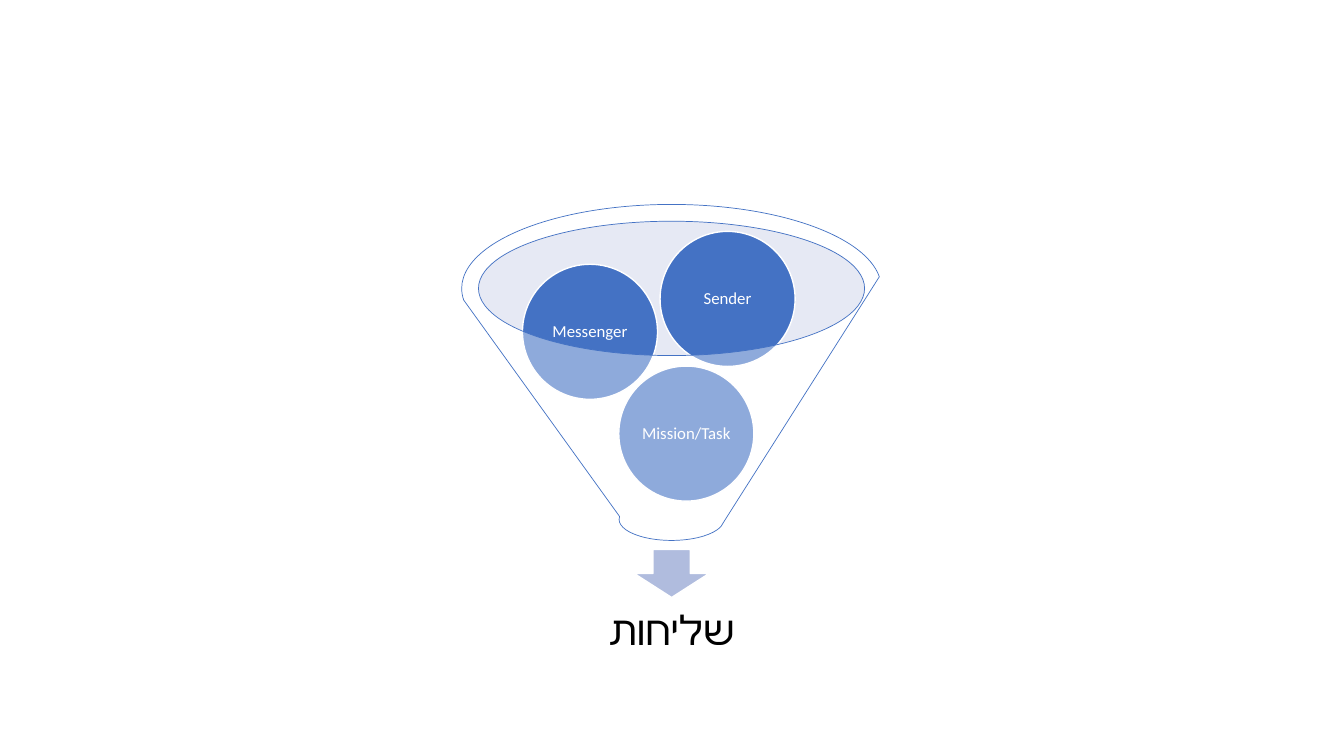
from lxml.etree import SubElement
from pptx import Presentation
from pptx.dml.color import RGBColor
from pptx.enum.shapes import MSO_SHAPE as Preset
from pptx.enum.text import MSO_ANCHOR as Anchor, PP_ALIGN as Align
from pptx.oxml.ns import qn
from pptx.util import Pt

ACCENT, WHITE, BLACK = "4472C4", "FFFFFF", "000000"
MOUTH_TINT, ARROW_TINT = "C1C9E4", "B0BCDE"
BALL_SIZE = 96.5
BALLS = [
    ("Mission/Task", 442, 261.5),
    ("Messenger", 373.2, 188.8),
    ("Sender", 471.5, 165.3),
]


def rgb(hex_code):
    return RGBColor.from_string(hex_code)


class FunnelSlide:
    font_name = "Calibri"

    def __init__(self, slide):
        self.shapes = slide.shapes

    def shape(self, preset, box, fill, line=None, weight=1, opacity=None):
        """Add a preset shape; opacity is a percentage."""
        item = self.shapes.add_shape(preset, *map(Pt, box))
        item.shadow.inherit = False
        item.fill.solid()
        item.fill.fore_color.rgb = rgb(fill)
        if opacity is not None:
            color = item.fill._xPr.find(qn("a:solidFill"))[0]
            SubElement(color, qn("a:alpha")).set("val", str(opacity * 1000))
        if line:
            item.line.color.rgb = rgb(line)
            item.line.width = Pt(weight)
        else:
            item.line.fill.background()
        return item

    def centre_text(self, holder, text, size, color, inset):
        """Centre right-to-left text inside a shape or text box."""
        frame = holder.text_frame
        frame_format = {"word_wrap": True, "vertical_anchor": Anchor.MIDDLE}
        for side in ("left", "top", "right", "bottom"):
            frame_format[f"margin_{side}"] = Pt(inset)
        for name, value in frame_format.items():
            setattr(frame, name, value)

        paragraph = frame.paragraphs[0]
        paragraph.alignment = Align.CENTER
        paragraph.line_spacing = 0.9
        paragraph._p.get_or_add_pPr().set("rtl", "1")
        run = paragraph.add_run()
        run.text = text
        for name, value in {"name": self.font_name, "size": Pt(size)}.items():
            setattr(run.font, name, value)
        run.font.color.rgb = rgb(color)
        SubElement(run._r.get_or_add_rPr(), qn("a:cs")).set("typeface", self.font_name)

    def ball(self, text, left, top):
        circle = self.shape(Preset.OVAL, (left, top, BALL_SIZE, BALL_SIZE), ACCENT, WHITE)
        self.centre_text(circle, text, 12, WHITE, inset=1.2)

    def label(self, text, box):
        self.centre_text(self.shapes.add_textbox(*map(Pt, box)), text, 29, BLACK, inset=16.5)


def main():
    deck = Presentation()
    deck.slide_width, deck.slide_height = Pt(960), Pt(540)
    funnel = FunnelSlide(deck.slides.add_slide(deck.slide_layouts[6]))

    funnel.shape(Preset.OVAL, (341.5, 157.8, 276.5, 96), MOUTH_TINT, opacity=40)
    funnel.shape(Preset.DOWN_ARROW, (453, 392.5, 53.5, 34.3), ARROW_TINT, WHITE)
    funnel.label("שליחות", (351.4, 420, 257, 64))
    for ball in BALLS:
        funnel.ball(*ball)
    funnel.shape(Preset.FUNNEL, (329.8, 146, 299.8, 240), WHITE, ACCENT, 0.5, opacity=40)

    deck.save("out.pptx")


if __name__ == "__main__":
    main()
